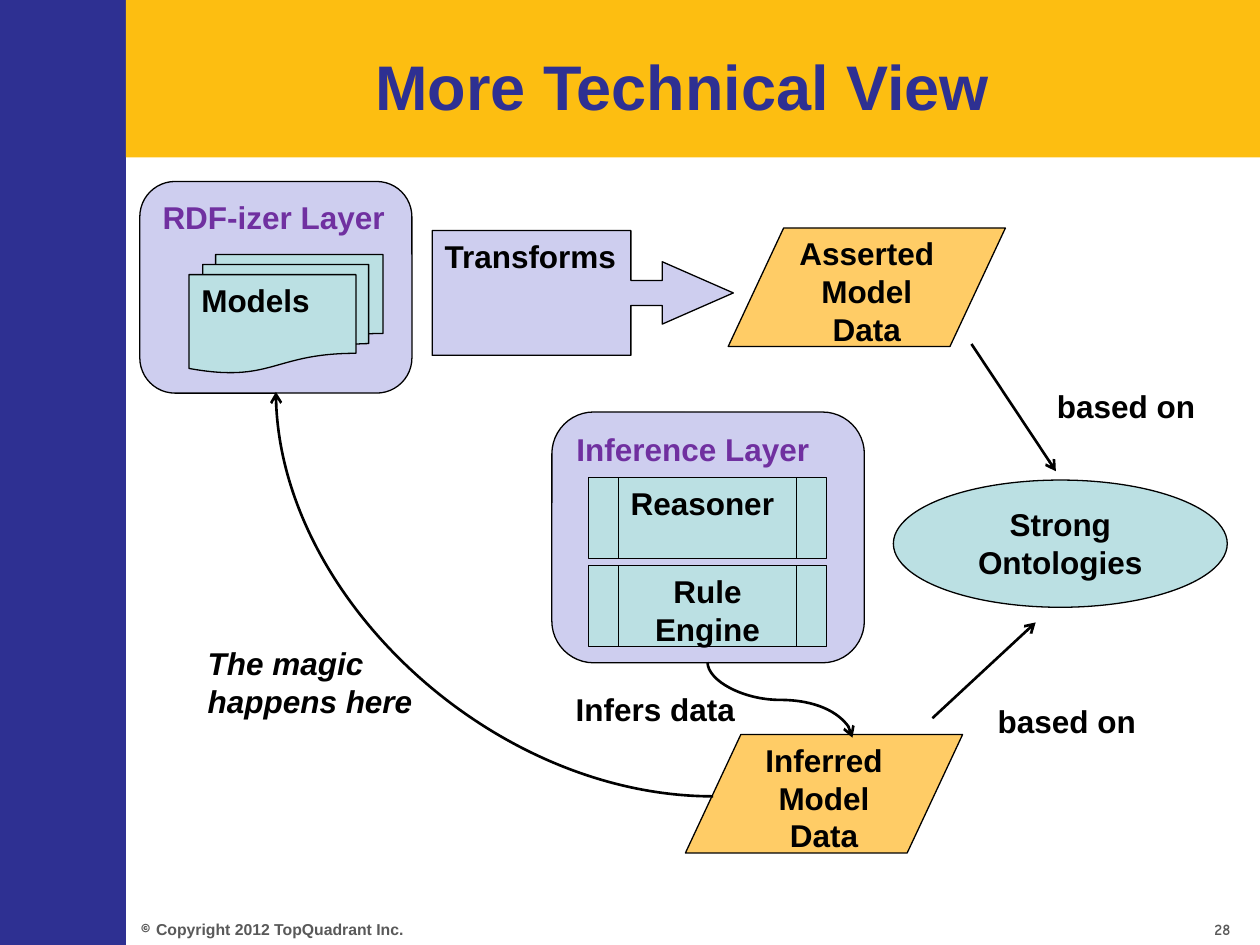
from pptx import Presentation
from pptx.dml.color import RGBColor
from pptx.enum.shapes import MSO_CONNECTOR as Link, MSO_SHAPE as Shape
from pptx.enum.text import MSO_ANCHOR as Anchor, MSO_AUTO_SIZE as AutoSize, PP_ALIGN as Align
from pptx.oxml.ns import qn
from pptx.util import Inches, Pt
from lxml import etree

NAVY = RGBColor(0x2E, 0x30, 0x92)
GOLD = RGBColor(0xFD, 0xBE, 0x11)
LILAC = RGBColor(0xCE, 0xCE, 0xEF)
TEAL = RGBColor(0xBB, 0xE0, 0xE3)
ORANGE = RGBColor(0xFF, 0xCC, 0x66)
PURPLE = RGBColor(0x70, 0x30, 0xA0)
GRAY = RGBColor(0x59, 0x59, 0x59)
BLACK = RGBColor(0, 0, 0)


def write(frame, lines, size=18, color=BLACK, align=Align.LEFT, font="Arial"):
    for index, line in enumerate(lines):
        para = frame.paragraphs[0] if index == 0 else frame.add_paragraph()
        para.text = line
        para.alignment = align
        para.font.name = font
        para.font.size = Pt(size)
        para.font.bold = True
        para.font.color.rgb = color


def finish_arrow(arrow):
    arrow.line.color.rgb = BLACK
    arrow.line.width = Pt(1.5)
    properties = arrow._element.spPr
    etree.SubElement(properties.find(qn("a:ln")), qn("a:tailEnd"), type="arrow")
    etree.SubElement(properties, qn("a:effectLst"))


deck = Presentation()
deck.slide_width, deck.slide_height = Inches(10), Inches(7.5)
page = deck.slides.add_slide(deck.slide_layouts[5])
shapes = page.shapes

# Side and top bands
for left, width, height, color in [(0, 1, 7.5, NAVY), (1, 9, 1.25, GOLD)]:
    band = shapes.add_shape(Shape.RECTANGLE, Inches(left), 0, Inches(width), Inches(height))
    band.shadow.inherit = False
    band.fill.solid()
    band.fill.fore_color.rgb = color
    band.line.fill.background()

# Title, brought in front of the bands
title = shapes.title
shapes._spTree.append(title._element)
title.left, title.top = Inches(1), Inches(0.33)
title.width, title.height = Inches(8.83), Inches(0.7)
title.text_frame.auto_size = AutoSize.NONE
title.text_frame.vertical_anchor = Anchor.MIDDLE
write(title.text_frame, ["More Technical View"], 36, NAVY, Align.CENTER)

# Footer: copyright line and page number
footer = shapes.add_textbox(Inches(1.02), Inches(7.25), Inches(7.56), Inches(0.25)).text_frame
footer.word_wrap = True
footer.vertical_anchor = Anchor.MIDDLE
write(footer, ["© "], 9, GRAY, font="Comic Neue")
span = footer.paragraphs[0].add_run()
span.text = "Copyright 2012 TopQuadrant Inc."
span.font.name = "Arial"
number = shapes.add_textbox(Inches(9.54), Inches(7.25), Inches(0.46), Inches(0.25)).text_frame
number.word_wrap = False
write(number, ["28"], 9, GRAY, font="Comic Neue")

# Diagram nodes: kind, left, top, width, height, fill, lines, text colour, alignment
nodes = [
    (Shape.ROUNDED_RECTANGLE, 4.38, 3.27, 2.48, 1.99, LILAC, ["Inference Layer"], PURPLE, Align.LEFT),
    (Shape.ROUNDED_RECTANGLE, 1.11, 1.44, 2.16, 1.68, LILAC, ["RDF-izer Layer"], PURPLE, Align.LEFT),
    (Shape.FLOWCHART_MULTIDOCUMENT, 1.5, 2.02, 1.54, 0.94, TEAL, ["Models"], BLACK, Align.LEFT),
    (Shape.RIGHT_ARROW_CALLOUT, 3.43, 1.83, 2.39, 0.99, LILAC, ["Transforms"], BLACK, Align.LEFT),
    (Shape.FLOWCHART_PREDEFINED_PROCESS, 4.67, 3.79, 1.89, 0.64, TEAL, ["Reasoner"], BLACK, Align.LEFT),
    (Shape.FLOWCHART_PREDEFINED_PROCESS, 4.67, 4.49, 1.89, 0.64, TEAL, ["Rule Engine"], BLACK, Align.CENTER),
    (Shape.FLOWCHART_DATA, 5.78, 1.81, 2.2, 0.94, ORANGE, ["Asserted", "Model Data"], BLACK, Align.CENTER),
    (Shape.FLOWCHART_DATA, 5.44, 5.83, 2.2, 0.94, ORANGE, ["Inferred", "Model Data"], BLACK, Align.CENTER),
    (Shape.OVAL, 7.09, 3.81, 2.65, 1.01, TEAL, ["Strong Ontologies"], BLACK, Align.CENTER),
]
for kind, left, top, width, height, fill, lines, color, align in nodes:
    node = shapes.add_shape(kind, Inches(left), Inches(top), Inches(width), Inches(height))
    node.shadow.inherit = False
    node.fill.solid()
    node.fill.fore_color.rgb = fill
    node.line.color.rgb = BLACK
    node.line.width = Pt(0.75)
    if kind == Shape.RIGHT_ARROW_CALLOUT:
        for index, value in enumerate([0.2, 0.25, 0.57, 0.66]):
            node.adjustments[index] = value
    node.text_frame.vertical_anchor = Anchor.TOP
    write(node.text_frame, lines, color=color, align=align)

# Free labels
labels = [
    ("based on", 8.29, 3.02, 1.31, 0.4),
    ("based on", 7.82, 5.52, 1.31, 0.4),
    ("Infers data", 4.47, 5.43, 1.48, 0.4),
    ("The magic happens here", 1.55, 5.06, 2.39, 0.71),
]
for text, left, top, width, height in labels:
    label = shapes.add_textbox(Inches(left), Inches(top), Inches(width), Inches(height)).text_frame
    label.word_wrap = text.startswith("The magic")
    write(label, [text])
    label.paragraphs[0].font.italic = True if label.word_wrap else None

# Arrows: kind, start, end, rotation (curves are placed before they are turned)
arrows = [
    (Link.STRAIGHT, 7.71, 2.73, 8.38, 3.74, 0),
    (Link.STRAIGHT, 7.4, 5.7, 8.22, 4.94, 0),
    (Link.CURVE, 6.49, 4.98, 5.89, 6.13, 270),
    (Link.CURVE, 2.19, 3.11, 5.66, 6.32, 180),
]
for kind, x1, y1, x2, y2, turn in arrows:
    arrow = shapes.add_connector(kind, Inches(x1), Inches(y1), Inches(x2), Inches(y2))
    arrow.rotation = turn
    if turn == 180:  # a quarter bend instead of an S
        arrow._element.spPr.find(qn("a:prstGeom")).set("prst", "curvedConnector2")
    finish_arrow(arrow)

deck.save("out.pptx")
